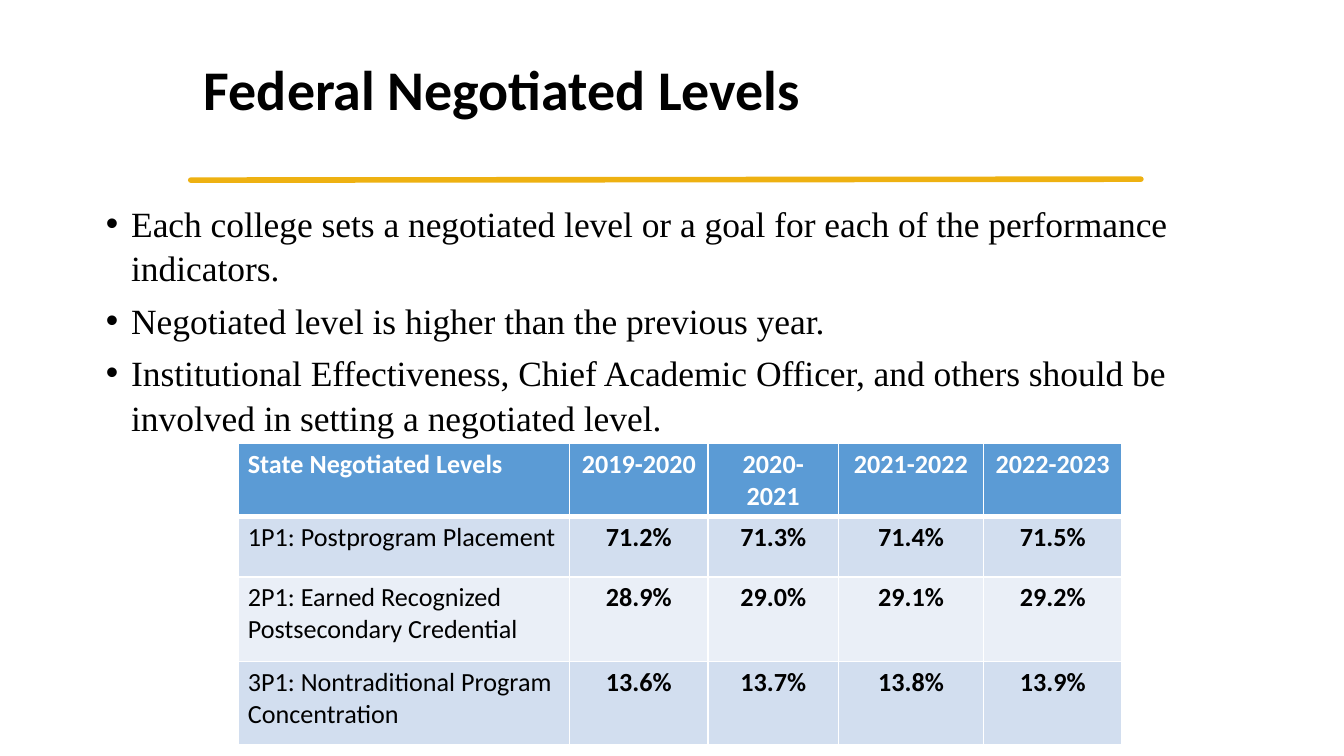
from lxml.etree import SubElement
from pptx import Presentation
from pptx.dml.color import RGBColor
from pptx.enum.shapes import MSO_CONNECTOR
from pptx.enum.text import MSO_ANCHOR, PP_ALIGN
from pptx.oxml.ns import qn
from pptx.util import Pt

BLACK = RGBColor(0x00, 0x00, 0x00)
WHITE = RGBColor(0xFF, 0xFF, 0xFF)
GOLD = RGBColor(0xEE, 0xB1, 0x11)
HEADER_BLUE = RGBColor(0x5B, 0x9B, 0xD5)
BAND_DARK = RGBColor(0xD2, 0xDE, 0xEF)
BAND_LIGHT = RGBColor(0xEA, 0xEF, 0xF7)

BULLETS = [
    "Each college sets a negotiated level or a goal for each of the performance indicators.",
    "Negotiated level is higher than the previous year.",
    "Institutional Effectiveness, Chief Academic Officer, and others should be involved "
    "in setting a negotiated level.",
]
LEVELS = [
    ["State Negotiated Levels", "2019-2020", "2020-2021", "2021-2022", "2022-2023"],
    ["1P1: Postprogram Placement", "71.2%", "71.3%", "71.4%", "71.5%"],
    ["2P1: Earned Recognized Postsecondary Credential", "28.9%", "29.0%", "29.1%", "29.2%"],
    ["3P1: Nontraditional Program Concentration", "13.6%", "13.7%", "13.8%", "13.9%"],
]
COLUMN_WIDTHS = [177.8, 74.2, 69.8, 77.8, 74.2]
ROW_HEIGHTS = [29.5, 32.4, 45.4, 44.6]


def write_text(paragraph, text, font="Calibri", size=14, color=BLACK, bold=False,
               align=PP_ALIGN.LEFT, spacing=None, before=None, bullet_indent=None):
    """Fill a paragraph with formatted text."""
    if bullet_indent:
        properties = paragraph._p.get_or_add_pPr()
        properties.set("marL", str(Pt(bullet_indent)))
        properties.set("indent", str(-Pt(bullet_indent)))
        SubElement(properties, qn("a:buFont")).set("typeface", "Arial")
        SubElement(properties, qn("a:buChar")).set("char", "•")
    paragraph.alignment = align
    if spacing:
        paragraph.line_spacing = spacing
    if before:
        paragraph.space_before = Pt(before)
    run = paragraph.add_run()
    run.text = text
    run.font.name = font
    run.font.size = Pt(size)
    run.font.bold = bold
    run.font.color.rgb = color


def add_text_frame(slide, left, top, width, height, anchor=MSO_ANCHOR.TOP):
    """Add a wrapping text box and return its text frame."""
    box = slide.shapes.add_textbox(Pt(left), Pt(top), Pt(width), Pt(height))
    frame = box.text_frame
    frame.word_wrap = True
    frame.vertical_anchor = anchor
    return frame


def add_title(slide, left, top, width, height):
    """Place the slide title."""
    frame = add_text_frame(slide, left, top, width, height, MSO_ANCHOR.MIDDLE)
    write_text(frame.paragraphs[0], "Federal Negotiated Levels", size=30, bold=True, spacing=0.9)


def add_rule(slide, left, top, width, height):
    """Draw the gold rule, rising slightly across its box."""
    rule = slide.shapes.add_connector(
        MSO_CONNECTOR.STRAIGHT, Pt(left), Pt(top + height), Pt(left + width), Pt(top))
    rule.line.color.rgb = GOLD
    rule.line.width = Pt(3)
    properties = rule._element.spPr
    properties.find(qn("a:ln")).set("cap", "rnd")
    SubElement(properties, qn("a:effectLst"))


def add_bullets(slide, left, top, width, height):
    """Place the bulleted statements."""
    frame = add_text_frame(slide, left, top, width, height)
    for index, text in enumerate(BULLETS):
        paragraph = frame.add_paragraph() if index else frame.paragraphs[0]
        write_text(paragraph, text, font="Times New Roman", size=19, spacing=1.04,
                   before=4.5 if index else None, bullet_indent=13.5)


def set_borders(cell, top, bottom):
    """Give a cell white borders with the given top and bottom widths."""
    properties = cell._tc.get_or_add_tcPr()
    for side, width in (("L", 1), ("R", 1), ("T", top), ("B", bottom)):
        line = SubElement(properties, qn(f"a:ln{side}"), w=str(Pt(width)))
        fill = SubElement(line, qn("a:solidFill"))
        SubElement(fill, qn("a:srgbClr"), val=str(WHITE))


def add_levels_table(slide, left, top):
    """Place the table of state negotiated levels."""
    table = slide.shapes.add_table(
        len(LEVELS), len(COLUMN_WIDTHS), Pt(left), Pt(top),
        Pt(sum(COLUMN_WIDTHS)), Pt(sum(ROW_HEIGHTS))).table
    for column, width in zip(table.columns, COLUMN_WIDTHS):
        column.width = Pt(width)
    for row_index, values in enumerate(LEVELS):
        table.rows[row_index].height = Pt(ROW_HEIGHTS[row_index])
        header = row_index == 0
        band = BAND_DARK if row_index % 2 else BAND_LIGHT
        for column_index, text in enumerate(values):
            cell = table.cell(row_index, column_index)
            set_borders(cell, 3 if row_index == 1 else 1, 3 if header else 1)
            cell.fill.solid()
            cell.fill.fore_color.rgb = HEADER_BLUE if header else band
            cell.margin_left = cell.margin_right = Pt(5.4)
            cell.margin_top = cell.margin_bottom = Pt(2.7)
            write_text(cell.text_frame.paragraphs[0], text,
                       color=WHITE if header else BLACK,
                       bold=header or column_index > 0,
                       align=PP_ALIGN.CENTER if column_index else PP_ALIGN.LEFT)


def main():
    """Build and save the presentation."""
    presentation = Presentation()
    presentation.slide_width = Pt(720)
    presentation.slide_height = Pt(405)
    slide = presentation.slides.add_slide(presentation.slide_layouts[6])
    add_rule(slide, 102.2, 96, 509, 0.5)
    add_bullets(slide, 49.7, 103.7, 620.6, 298)
    add_title(slide, 102.2, 10, 579.6, 78.5)
    add_levels_table(slide, 127.4, 237.6)
    presentation.save("out.pptx")


if __name__ == "__main__":
    main()
